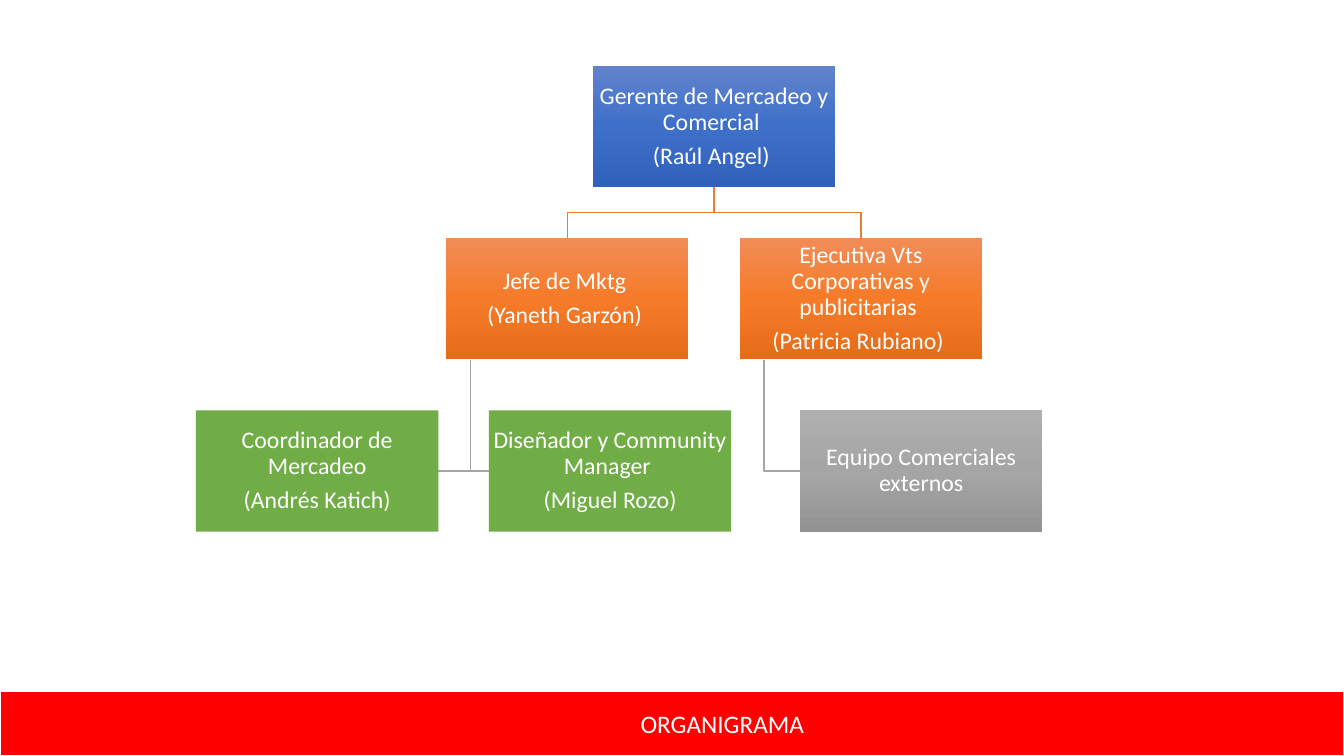
import copy
from dataclasses import dataclass

import pptx
import pptx.dml.color
import pptx.enum.shapes
import pptx.enum.text
import pptx.oxml.ns
import pptx.util
from pptx.util import Cm

FONT = "Calibri"
WHITE = "FFFFFF"
BLUE = ("6183CB", "3E70CA", "3062BB")
ORANGE = ("F18C57", "F67B28", "E56C19")
GREY = ("AFAFAF", "A5A5A5", "939393")
GREEN = ("70AD47",)
MANAGER_LINK, TEAM_LINK = "ED7D31", "A5A5A5"

# Measures in centimetres
BOX_WIDTH, BOX_HEIGHT = 6.11, 3.06
FIRST_TIER, TIER_STEP = 1.66, 4.34
SPINE_INSET = BOX_WIDTH / 10

Point = tuple[float, float]


@dataclass(frozen=True)
class Position:
    lines: tuple[str, ...]
    left: float
    tier: int
    colours: tuple[str, ...]

    @property
    def top(self) -> float:
        return FIRST_TIER + self.tier * TIER_STEP

    @property
    def bottom(self) -> float:
        return self.top + BOX_HEIGHT

    @property
    def centre(self) -> float:
        return self.left + BOX_WIDTH / 2

    @property
    def middle(self) -> float:
        return self.top + BOX_HEIGHT / 2


MANAGER = Position(("Gerente de Mercadeo y Comercial ", "(Raúl Angel) "), 14.94, 0, BLUE)
MARKETING = Position(("Jefe de Mktg ", "(Yaneth Garzón) "), 11.24, 1, ORANGE)
SALES = Position(("Ejecutiva Vts Corporativas y publicitarias ", "(Patricia Rubiano) "),
                 18.64, 1, ORANGE)
COORDINATOR = Position(("Coordinador de Mercadeo", "(Andrés Katich)"), 4.94, 2, GREEN)
DESIGNER = Position(("Diseñador y Community Manager ", "(Miguel Rozo)"), 12.32, 2, GREEN)
SALES_TEAM = Position(("Equipo Comerciales externos",), 20.16, 2, GREY)

POSITIONS = (MANAGER, MARKETING, DESIGNER, COORDINATOR, SALES, SALES_TEAM)
MANAGER_REPORTS = (SALES, MARKETING)
TEAM_REPORTS = ((SALES, SALES_TEAM), (MARKETING, COORDINATOR), (MARKETING, DESIGNER))


def rgb(colour: str) -> pptx.dml.color.RGBColor:
    return pptx.dml.color.RGBColor.from_string(colour)


def fill_shape(shape, colours: tuple[str, ...]) -> None:
    """Fill with one colour, or with three from top to bottom."""
    if len(colours) == 1:
        shape.fill.solid()
        shape.fill.fore_color.rgb = rgb(colours[0])
        return
    shape.fill.gradient()
    shape.fill.gradient_angle = 270
    stop_list = shape._element.spPr.find(".//" + pptx.oxml.ns.qn("a:gsLst"))
    stop_list.append(copy.deepcopy(stop_list[0]))
    for index, (stop, colour) in enumerate(zip(shape.fill.gradient_stops, colours)):
        stop.position = index / (len(colours) - 1)
        stop.color.rgb = rgb(colour)


def format_text(frame, size: float, line_spacing: float, space_after: float) -> None:
    frame.word_wrap = True
    frame.auto_size = pptx.enum.text.MSO_AUTO_SIZE.NONE
    frame.vertical_anchor = pptx.enum.text.MSO_ANCHOR.MIDDLE
    for paragraph in frame.paragraphs:
        paragraph.alignment = pptx.enum.text.PP_ALIGN.CENTER
        paragraph.line_spacing = line_spacing
        paragraph.space_before = pptx.util.Pt(0)
        paragraph.space_after = pptx.util.Pt(space_after)
        for run in paragraph.runs:
            run.font.name = FONT
            run.font.size = pptx.util.Pt(size)
            run.font.color.rgb = rgb(WHITE)


def draw_title(slide) -> None:
    title = slide.shapes.title
    title.left, title.top, title.width, title.height = Cm(0), Cm(17.43), Cm(33.87), Cm(1.62)
    fill_shape(title, ("FF0000",))
    title.line.color.rgb = rgb(WHITE)
    title.line.width = pptx.util.Pt(1)
    title.text_frame.text = "ORGANIGRAMA"
    title.text_frame.margin_left = Cm(2.79)
    format_text(title.text_frame, 18, 1.0, 0)


def draw_link(slide, points: list[Point], colour: str) -> None:
    start, *rest = [(Cm(x), Cm(y)) for x, y in points]
    builder = slide.shapes.build_freeform(*start, scale=1.0)
    builder.add_line_segments(rest, close=False)
    link = builder.convert_to_shape()
    link.shadow.inherit = False
    link.fill.background()
    link.line.color.rgb = rgb(colour)
    link.line.width = pptx.util.Pt(1)


def draw_position(slide, position: Position) -> None:
    box = slide.shapes.add_shape(
        pptx.enum.shapes.MSO_SHAPE.RECTANGLE,
        Cm(position.left), Cm(position.top), Cm(BOX_WIDTH), Cm(BOX_HEIGHT))
    box.shadow.inherit = False
    fill_shape(box, position.colours)
    box.line.fill.background()
    frame = box.text_frame
    frame.text = "\n".join(position.lines)
    frame.margin_left = frame.margin_right = Cm(0.03)
    frame.margin_top = frame.margin_bottom = Cm(0.03)
    format_text(frame, 17, 0.9, 6)


def main() -> None:
    presentation = pptx.Presentation()
    presentation.slide_width, presentation.slide_height = Cm(33.87), Cm(19.05)
    slide = presentation.slides.add_slide(presentation.slide_layouts.get_by_name("Title Only"))

    # Title bar
    draw_title(slide)

    # Links from the manager, branching halfway between tiers
    for report in MANAGER_REPORTS:
        branch = (MANAGER.bottom + report.top) / 2
        draw_link(slide, [(MANAGER.centre, MANAGER.bottom), (MANAGER.centre, branch),
                          (report.centre, branch), (report.centre, report.top)], MANAGER_LINK)

    # Links to the teams, running down a spine to the nearer side of each box
    for head, report in TEAM_REPORTS:
        spine = head.left + SPINE_INSET
        side = report.left if report.left > spine else report.left + BOX_WIDTH
        draw_link(slide, [(spine, head.bottom), (spine, report.middle),
                          (side, report.middle)], TEAM_LINK)

    # Positions
    for position in POSITIONS:
        draw_position(slide, position)

    presentation.save("out.pptx")


if __name__ == "__main__":
    main()
